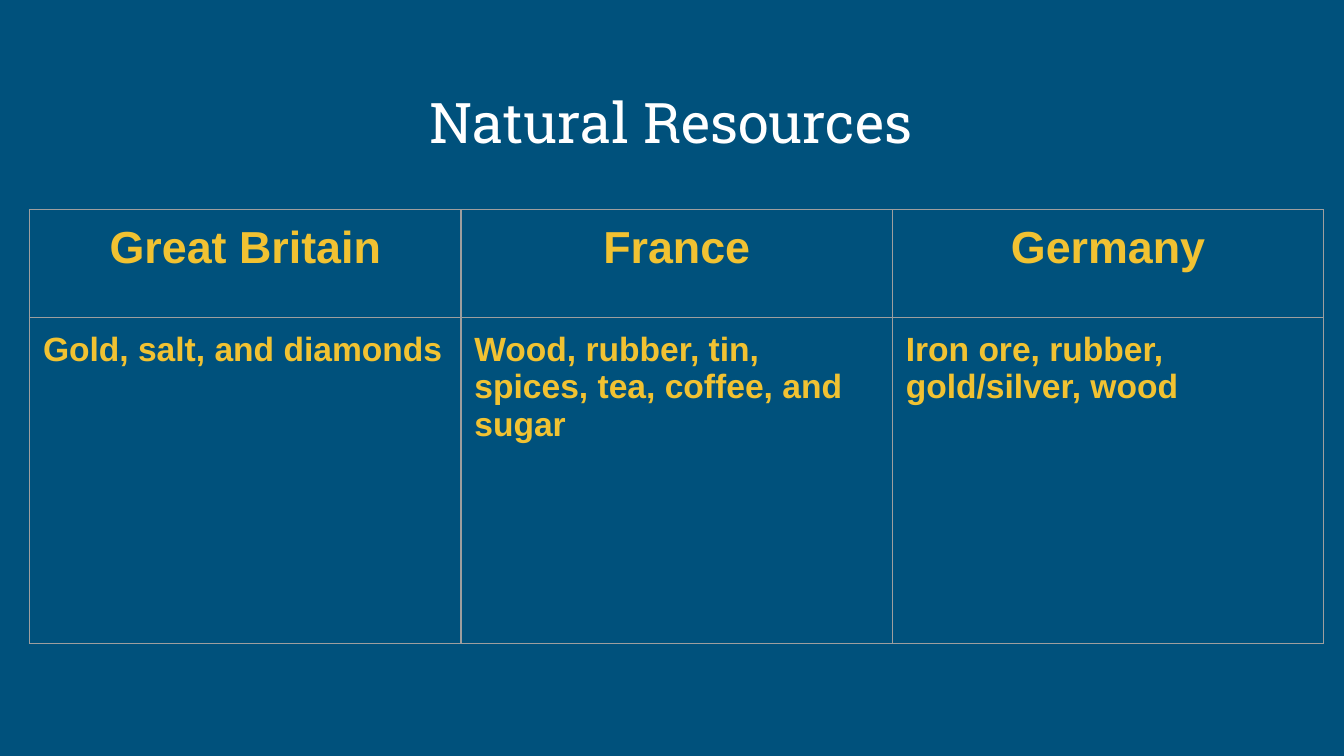
from dataclasses import dataclass

from lxml import etree
from pptx import Presentation
from pptx.dml.color import RGBColor
from pptx.enum import text
from pptx.oxml.ns import qn
from pptx.util import Inches, Pt


@dataclass(frozen=True)
class Theme:
    background: str = "00517C"
    title_color: str = "FFFFFF"
    accent: str = "F1C232"
    border: str = "9E9E9E"
    border_width: float = 0.75
    title_font: str = "Roboto Slab"
    table_font: str = "Arial"
    title_size: int = 30
    heading_size: int = 24
    body_size: int = 18
    inset: float = 0.1


@dataclass(frozen=True)
class Country:
    name: str
    resources: str


THEME = Theme()
COUNTRIES = [
    Country("Great Britain", "Gold, salt, and diamonds"),
    Country("France", "Wood, rubber, tin, spices, tea, coffee, and sugar"),
    Country("Germany", "Iron ore, rubber, gold/silver, wood"),
]
COLUMN_WIDTH = 3.21
ROW_HEIGHTS = (0.8, 2.43)


def set_insets(target) -> None:
    """Give a text frame or table cell the same margin on every side."""
    for side in ("left", "top", "right", "bottom"):
        setattr(target, f"margin_{side}", Inches(THEME.inset))


def style_text(frame, font_name: str, size: int, color: str, bold: bool, align) -> None:
    for paragraph in frame.paragraphs:
        paragraph.alignment = align
        for run in paragraph.runs:
            run.font.name = font_name
            run.font.size = Pt(size)
            run.font.bold = bold
            run.font.color.rgb = RGBColor.from_string(color)


def add_borders(cell) -> None:
    """Outline a cell; the lines must precede its fill in the XML."""
    properties = cell._tc.get_or_add_tcPr()
    for position, tag in enumerate(("a:lnL", "a:lnR", "a:lnT", "a:lnB")):
        line = etree.Element(qn(tag), w=str(Pt(THEME.border_width)))
        fill = etree.SubElement(line, qn("a:solidFill"))
        etree.SubElement(fill, qn("a:srgbClr"), val=THEME.border)
        properties.insert(position, line)


def fill_cell(cell, wording: str, size: int, align) -> None:
    cell.text_frame.text = wording
    style_text(cell.text_frame, THEME.table_font, size, THEME.accent, True, align)
    set_insets(cell)
    cell.vertical_anchor = text.MSO_ANCHOR.TOP
    cell.fill.background()
    add_borders(cell)


def add_title(slide, wording: str) -> None:
    title = slide.shapes.title
    title.left, title.top = Inches(0.42), Inches(0.5)
    title.width, title.height = Inches(9.15), Inches(0.75)
    frame = title.text_frame
    frame.text = wording
    frame.word_wrap = True
    frame.auto_size = text.MSO_AUTO_SIZE.NONE
    frame.vertical_anchor = text.MSO_ANCHOR.BOTTOM
    set_insets(frame)
    style_text(frame, THEME.title_font, THEME.title_size, THEME.title_color,
               False, text.PP_ALIGN.CENTER)


def add_resource_table(slide, countries: list[Country]) -> None:
    table = slide.shapes.add_table(
        len(ROW_HEIGHTS), len(countries), Inches(0.22), Inches(1.56),
        Inches(COLUMN_WIDTH * len(countries)), Inches(sum(ROW_HEIGHTS)),
    ).table
    table.first_row = table.horz_banding = False
    for row, height in zip(table.rows, ROW_HEIGHTS):
        row.height = Inches(height)
    for index, country in enumerate(countries):
        table.columns[index].width = Inches(COLUMN_WIDTH)
        fill_cell(table.cell(0, index), country.name,
                  THEME.heading_size, text.PP_ALIGN.CENTER)
        fill_cell(table.cell(1, index), country.resources,
                  THEME.body_size, text.PP_ALIGN.LEFT)


def main() -> None:
    deck = Presentation()
    deck.slide_width = Inches(10)
    deck.slide_height = deck.slide_width * 9 // 16
    title_only = deck.slide_layouts[5]
    slide = deck.slides.add_slide(title_only)
    background = slide.background.fill
    background.solid()
    background.fore_color.rgb = RGBColor.from_string(THEME.background)
    add_title(slide, "Natural Resources")
    add_resource_table(slide, COUNTRIES)
    deck.save("out.pptx")


if __name__ == "__main__":
    main()
